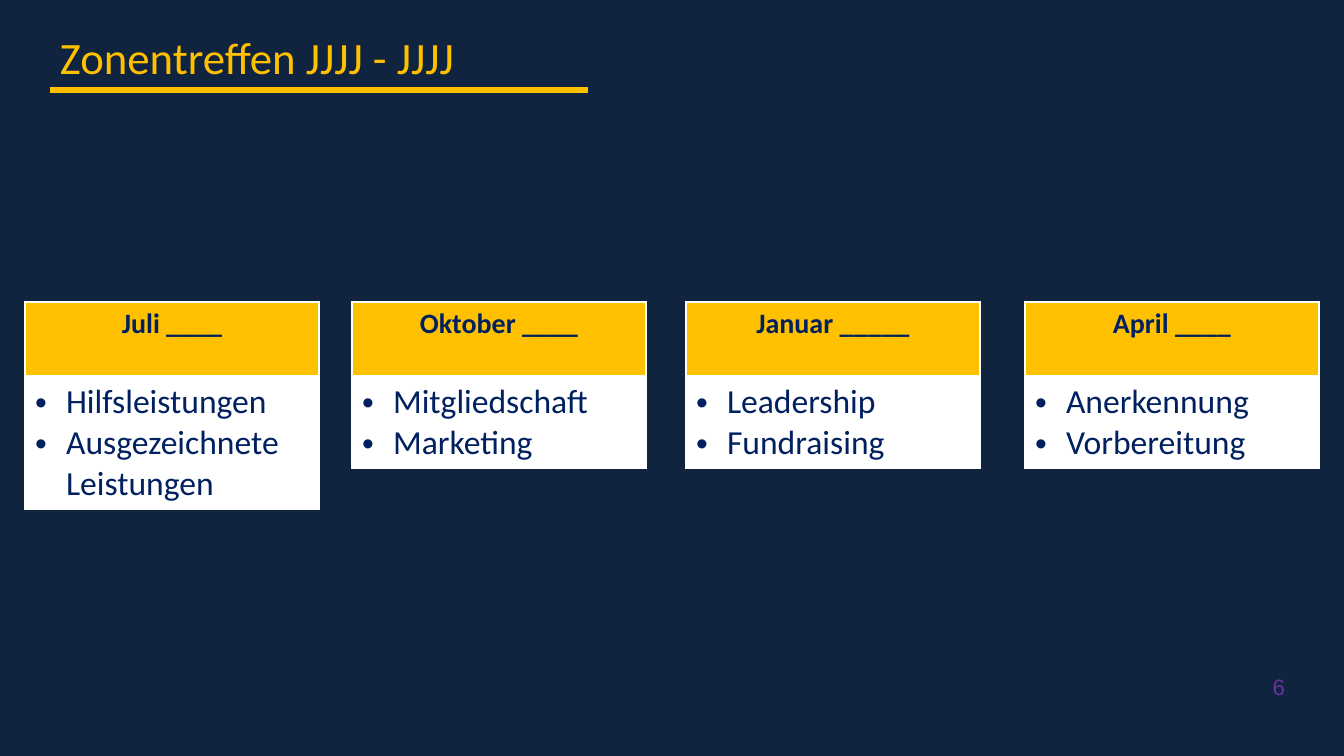
from dataclasses import dataclass

from lxml import etree
from pptx import Presentation
from pptx.dml.color import RGBColor
from pptx.enum.shapes import MSO_CONNECTOR
from pptx.enum.text import MSO_ANCHOR, PP_ALIGN
from pptx.oxml.ns import qn
from pptx.util import Emu, Pt

STRAIGHT = MSO_CONNECTOR.STRAIGHT
MIDDLE = MSO_ANCHOR.MIDDLE
LEFT, CENTER, RIGHT = PP_ALIGN.LEFT, PP_ALIGN.CENTER, PP_ALIGN.RIGHT

# Content
TITLE = "Zonentreffen JJJJ - JJJJ"
PAGE_NUMBER = "6"
MEETINGS = [  # left px, heading, topics, lines of text
    (25, "Juli ____", ["Hilfsleistungen", "Ausgezeichnete Leistungen"], 3),
    (352, "Oktober ____", ["Mitgliedschaft", "Marketing"], 2),
    (686, "Januar _____", ["Leadership", "Fundraising"], 2),
    (1025, "April ____", ["Anerkennung", "Vorbereitung"], 2),
]


@dataclass(frozen=True)
class Theme:
    background: str = "10233F"
    accent: str = "FFC000"
    ink: str = "002060"
    paper: str = "FFFFFF"
    number: str = "7030A0"
    font: str = "Calibri"
    number_font: str = "Arial"
    title_size: int = 32
    heading_size: int = 20
    topic_size: int = 24
    number_size: int = 16


THEME = Theme()

# Layout in px
SLIDE_WIDTH, SLIDE_HEIGHT = 1344, 756
TABLE_TOP, TABLE_WIDTH = 302, 294
HEADING_HEIGHT, LINE_HEIGHT, CELL_PADDING = 75, 41, 9
BULLET_INDENT = 31


def px(value):
    return Emu(round(value * 914400 / 100.8))


def color(value):
    return RGBColor.from_string(value)


def add_run(paragraph, text, size, ink, font=THEME.font, bold=False, align=LEFT):
    paragraph.alignment = align
    run = paragraph.add_run()
    run.text = text
    run.font.size = Pt(size)
    run.font.name = font
    run.font.bold = bold
    run.font.color.rgb = color(ink)


def add_text_box(slide, left, top, width, height):
    frame = slide.shapes.add_textbox(px(left), px(top), px(width), px(height)).text_frame
    frame.word_wrap = True
    return frame


def add_bullet(paragraph):
    properties = paragraph._p.get_or_add_pPr()
    properties.set("marL", str(px(BULLET_INDENT)))
    properties.set("indent", str(px(-BULLET_INDENT)))
    etree.SubElement(properties, qn("a:buFont"), typeface="Arial")
    etree.SubElement(properties, qn("a:buChar"), char="•")


def style_cell(cell, fill, bottom_width):
    cell.fill.solid()
    cell.fill.fore_color.rgb = color(fill)
    properties = cell._tc.get_or_add_tcPr()
    # Borders come before the fill
    for position, side in enumerate("LRTB"):
        width = bottom_width if side == "B" else 1
        border = etree.Element(qn(f"a:ln{side}"), w=str(Pt(width)))
        solid = etree.SubElement(border, qn("a:solidFill"))
        etree.SubElement(solid, qn("a:srgbClr"), val=THEME.paper)
        properties.insert(position, border)


def add_meeting(slide, left, heading, topics, lines):
    topics_height = lines * LINE_HEIGHT + CELL_PADDING
    table = slide.shapes.add_table(
        2, 1, px(left), px(TABLE_TOP), px(TABLE_WIDTH), px(HEADING_HEIGHT + topics_height)
    ).table
    table.rows[0].height = px(HEADING_HEIGHT)
    table.rows[1].height = px(topics_height)

    heading_cell, topics_cell = table.cell(0, 0), table.cell(1, 0)
    style_cell(heading_cell, THEME.accent, 3)
    style_cell(topics_cell, THEME.paper, 1)
    add_run(heading_cell.text_frame.paragraphs[0], heading, THEME.heading_size,
            THEME.ink, bold=True, align=CENTER)

    frame = topics_cell.text_frame
    for index, topic in enumerate(topics):
        paragraph = frame.add_paragraph() if index else frame.paragraphs[0]
        add_run(paragraph, topic, THEME.topic_size, THEME.ink)
        add_bullet(paragraph)


def main():
    presentation = Presentation()
    presentation.slide_width = px(SLIDE_WIDTH)
    presentation.slide_height = px(SLIDE_HEIGHT)
    slide = presentation.slides.add_slide(presentation.slide_layouts[6])
    slide.background.fill.solid()
    slide.background.fill.fore_color.rgb = color(THEME.background)

    # Page number
    frame = add_text_box(slide, 1224, 668, 61, 37)
    frame.margin_left = frame.margin_right = 0
    frame.vertical_anchor = MIDDLE
    add_run(frame.paragraphs[0], PAGE_NUMBER, THEME.number_size, THEME.number,
            font=THEME.number_font, align=RIGHT)

    # Title and its rule
    frame = add_text_box(slide, 50, 25, 572, 65)
    add_run(frame.paragraphs[0], TITLE, THEME.title_size, THEME.accent)
    rule = slide.shapes.add_connector(STRAIGHT, px(50), px(90), px(588), px(90))
    rule.line.color.rgb = color(THEME.accent)
    rule.line.width = Pt(4.5)
    etree.SubElement(rule._element.spPr, qn("a:effectLst"))

    # Meetings
    for meeting in MEETINGS:
        add_meeting(slide, *meeting)

    presentation.save("out.pptx")


if __name__ == "__main__":
    main()
